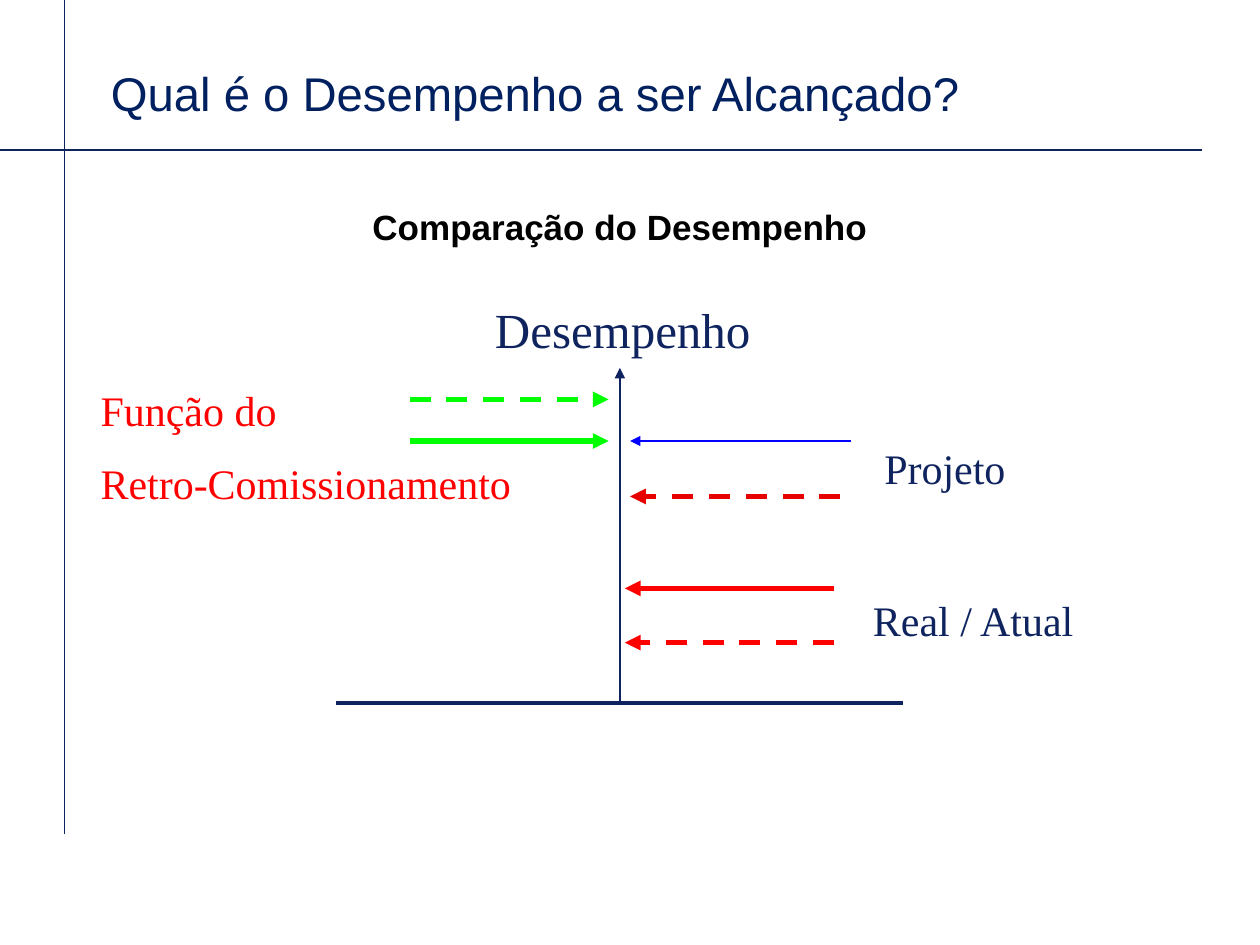
from lxml.etree import SubElement
from pptx import Presentation
from pptx.dml.color import RGBColor
from pptx.enum.dml import MSO_LINE
from pptx.enum.shapes import MSO_CONNECTOR
from pptx.enum.text import MSO_ANCHOR, MSO_AUTO_SIZE, PP_ALIGN
from pptx.oxml.ns import qn
from pptx.util import Inches, Pt

COLORS = {
    "navy": "0F245F", "title": "002060", "black": "000000", "red": "FF0000",
    "dark_red": "E70000", "green": "00FF00", "blue": "0000FF",
}
SERIF = "Times New Roman"


def write_text(shape, text, size, color, font="Arial", bold=False,
               align=PP_ALIGN.LEFT, anchor=MSO_ANCHOR.TOP, line_spacing=None,
               space_before=0):
    """Fill a shape with one paragraph for each line of text."""
    frame = shape.text_frame
    frame.word_wrap = True
    frame.auto_size = MSO_AUTO_SIZE.NONE
    frame.vertical_anchor = anchor
    for index, line in enumerate(text.split("\n")):
        para = frame.add_paragraph() if index else frame.paragraphs[0]
        properties = para._p.get_or_add_pPr()
        properties.set("marL", "0")
        properties.set("indent", "0")
        SubElement(properties, qn("a:buNone"))
        para.alignment = align
        para.line_spacing = line_spacing
        para.space_before = Pt(space_before if index else 0)
        span = para.add_run()
        span.text = line
        span.font.name = font
        span.font.size = Pt(size)
        span.font.bold = bold
        span.font.color.rgb = RGBColor.from_string(COLORS[color])


def place(shape, box):
    shape.left, shape.top, shape.width, shape.height = map(Inches, box)


def add_line(page, start, end, color="navy", width=0.75, dashed=False, arrow=False):
    line = page.shapes.add_connector(
        MSO_CONNECTOR.STRAIGHT, *map(Inches, (*start, *end)))
    line.line.color.rgb = RGBColor.from_string(COLORS[color])
    line.line.width = Pt(width)
    if dashed:
        line.line.dash_style = MSO_LINE.DASH
    if arrow:
        SubElement(line.line._get_or_add_ln(), qn("a:tailEnd"), type="triangle")
    SubElement(line._element.spPr, qn("a:effectLst"))


def add_heading(page, title_box, body_box):
    # Crossing rules
    add_line(page, (0.51, 6.62), (0.51, 0))
    add_line(page, (0, 1.19), (9.54, 1.19))
    # Title and subtitle
    title, body = page.placeholders[0], page.placeholders[1]
    place(title, title_box)
    write_text(title, "Qual é o Desempenho a ser Alcançado?", 27, "title",
               anchor=MSO_ANCHOR.BOTTOM, line_spacing=0.85)
    place(body, body_box)
    write_text(body, "Comparação do Desempenho", 20, "black", bold=True,
               align=PP_ALIGN.CENTER)


def add_diagram(page, box):
    left, top, width, height = box
    center, bottom = left + width / 2, top + height

    # Axes
    add_line(page, (left, bottom), (left + width, bottom), width=2.25)
    add_line(page, (center, bottom), (center, top), arrow=True)

    # Level arrows: offsets from the axis, height, colour, width, dashed
    arrows = [
        (-1.67, -0.09, 0.25, "green", 3, True),
        (-1.67, -0.09, 0.58, "green", 3, False),
        (1.83, 0.08, 0.58, "blue", 1, False),
        (1.75, 0.08, 1.02, "dark_red", 3, True),
        (1.7, 0.04, 1.75, "red", 3, False),
        (1.7, 0.04, 2.18, "red", 3, True),
    ]
    for start, end, level, color, weight, dashed in arrows:
        add_line(page, (center + start, top + level), (center + end, top + level),
                 color, weight, dashed, arrow=True)

    # Labels: offset from the axis top, size, text, font size, colour
    labels = [
        (-1.09, -0.59, 2.25, 0.57, "Desempenho", 28, "navy"),
        (2, 0.54, 1.67, 0.5, "Projeto", 24, "navy"),
        (1.91, 1.75, 1.83, 0.5, "Real / Atual", 24, "navy"),
        (-4.22, 0.08, 3.83, 1.11, "Função do\nRetro-Comissionamento", 24, "red"),
    ]
    for across, down, label_width, label_height, text, size, color in labels:
        label = page.shapes.add_textbox(*map(
            Inches, (center + across, top + down, label_width, label_height)))
        write_text(label, text, size, color, font=SERIF, space_before=13)


def main():
    deck = Presentation()
    deck.slide_width, deck.slide_height = Inches(10), Inches(7.5)
    page = deck.slides.add_slide(deck.slide_layouts[1])
    add_heading(page, (0.78, 0.33, 7.64, 0.68), (0.67, 1.58, 8.5, 4.75))
    add_diagram(page, (2.67, 2.92, 4.5, 2.66))
    deck.save("out.pptx")


if __name__ == "__main__":
    main()
